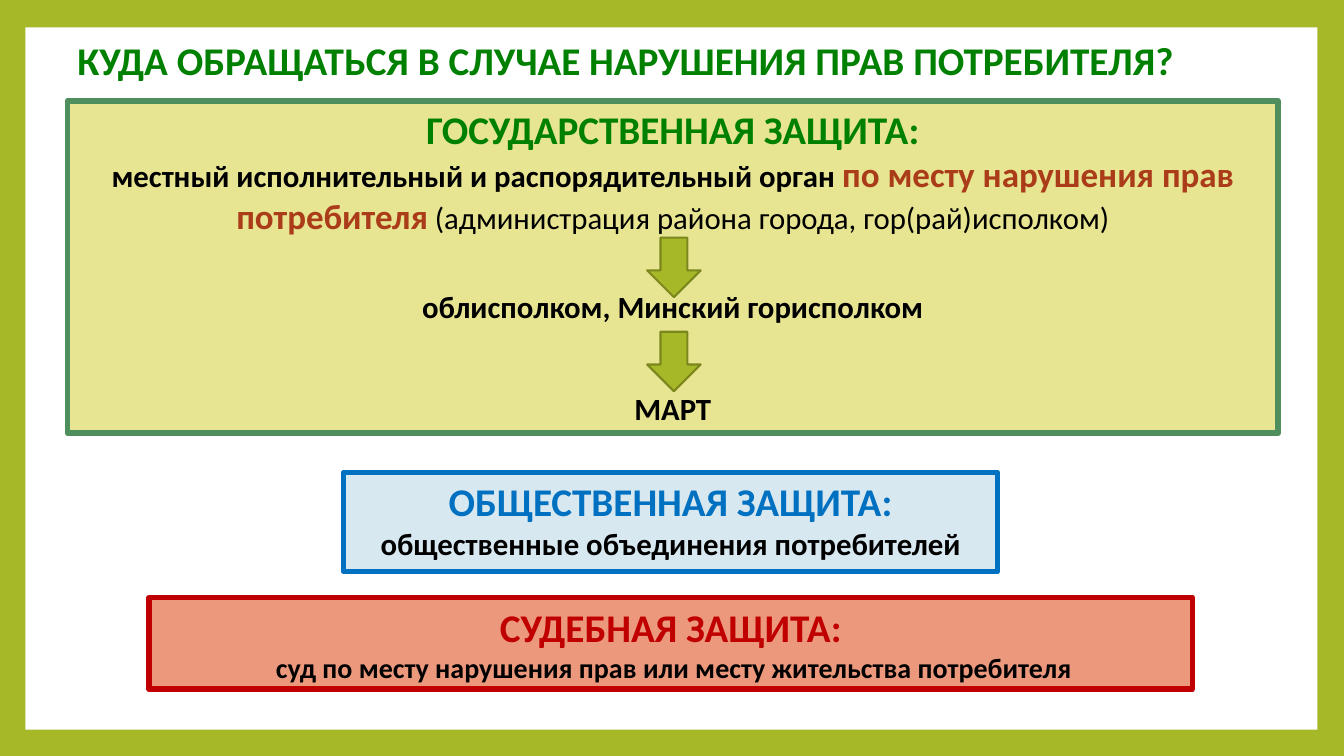
from pptx import Presentation
from pptx import util as u
from pptx.dml.color import RGBColor
from pptx.enum import shapes, text

OLIVE = RGBColor(0xA6, 0xB7, 0x27)
MOSS = RGBColor(0x7B, 0x87, 0x1D)
WHITE = RGBColor(0xFF, 0xFF, 0xFF)
BLACK = RGBColor(0, 0, 0)
GREEN = RGBColor(0, 0x80, 0)
SAGE = RGBColor(0x4F, 0x8F, 0x5E)
CREAM = RGBColor(0xE7, 0xE5, 0x91)
RUST = RGBColor(0xAB, 0x3C, 0x19)
BLUE = RGBColor(0, 0x70, 0xC0)
PALE = RGBColor(0xD8, 0xE8, 0xF1)
RED = RGBColor(0xC0, 0, 0)
CORAL = RGBColor(0xEC, 0x98, 0x7D)

KIND = shapes.MSO_SHAPE
TOP, MIDDLE = text.MSO_ANCHOR.TOP, text.MSO_ANCHOR.MIDDLE
LEFT, CENTER = text.PP_ALIGN.LEFT, text.PP_ALIGN.CENTER


class Board:
    def __init__(self, slide, font="Calibri", head=28):
        self.slide = slide
        self.font = font
        self.head = head

    def shape(self, kind, area, fill, line=None, width=0):
        item = self.slide.shapes.add_shape(kind, *map(u.Cm, area))
        item.shadow.inherit = False
        item.fill.solid()
        item.fill.fore_color.rgb = fill
        if line is None:
            item.line.fill.background()
        else:
            item.line.color.rgb = line
            item.line.width = u.Pt(width)
        return item

    def letter(self, frame, rows, align, anchor):
        """Fill the frame; each row is (space before, runs), a run is (words, size, colour, bold)."""
        frame.word_wrap = True
        frame.vertical_anchor = anchor
        for num, (gap, runs) in enumerate(rows):
            para = frame.add_paragraph() if num else frame.paragraphs[0]
            para.alignment = align
            para.space_before = u.Pt(gap)
            for words, size, tint, bold in runs:
                run = para.add_run()
                run.text = words
                run.font.name = self.font
                run.font.size = u.Pt(size)
                run.font.bold = bold
                run.font.color.rgb = tint

    def title(self, words, area, tint):
        box = self.slide.shapes.add_textbox(*map(u.Cm, area))
        rows = [(0, [(words, self.head, tint, True)])]
        self.letter(box.text_frame, rows, LEFT, MIDDLE)
        box.text_frame.paragraphs[0].line_spacing = 0.9

    def panel(self, area, fill, line, head, tint, rows, anchor=TOP):
        item = self.shape(KIND.RECTANGLE, area, fill, line, 4)
        first = (0, [(head, self.head, tint, True)])
        self.letter(item.text_frame, [first] + rows, CENTER, anchor)

    def arrow(self, top):
        self.shape(KIND.DOWN_ARROW, (16.31, top, 1.35, 1.5), OLIVE, MOSS, 1.5)


def main():
    deck = Presentation()
    deck.slide_width, deck.slide_height = u.Cm(33.87), u.Cm(19.05)
    slide = deck.slides.add_slide(deck.slide_layouts[6])
    back = slide.background.fill
    back.solid()
    back.fore_color.rgb = OLIVE

    board = Board(slide)
    board.shape(KIND.RECTANGLE, (0.64, 0.69, 32.56, 17.7), WHITE)
    board.title("КУДА ОБРАЩАТЬСЯ В СЛУЧАЕ НАРУШЕНИЯ ПРАВ ПОТРЕБИТЕЛЯ?",
                (1.7, 0.84, 31.52, 1.5), GREEN)
    board.panel((1.7, 2.54, 30.51, 8.38), CREAM, SAGE, "ГОСУДАРСТВЕННАЯ ЗАЩИТА:", GREEN, [
        (0, [("местный исполнительный и распорядительный орган ", 22, BLACK, True),
             ("по месту нарушения прав потребителя", 25, RUST, True),
             (" (администрация района города, гор(рай)исполком)", 22, BLACK, False)]),
        (36.6, [("облисполком, Минский горисполком", 22, BLACK, True)]),
        (46.4, [("МАРТ", 22, BLACK, True)]),
    ])
    board.panel((8.66, 11.91, 16.48, 2.49), PALE, BLUE, "ОБЩЕСТВЕННАЯ ЗАЩИТА:", BLUE, [
        (0, [("общественные объединения потребителей", 22, BLACK, True)]),
    ])
    board.panel((3.76, 15.06, 26.29, 2.31), CORAL, RED, "СУДЕБНАЯ ЗАЩИТА:", RED, [
        (0, [(" суд по месту нарушения прав или месту жительства потребителя",
              20, BLACK, True)]),
    ], MIDDLE)
    for top in (5.99, 8.36):
        board.arrow(top)
    deck.save("out.pptx")


if __name__ == "__main__":
    main()
